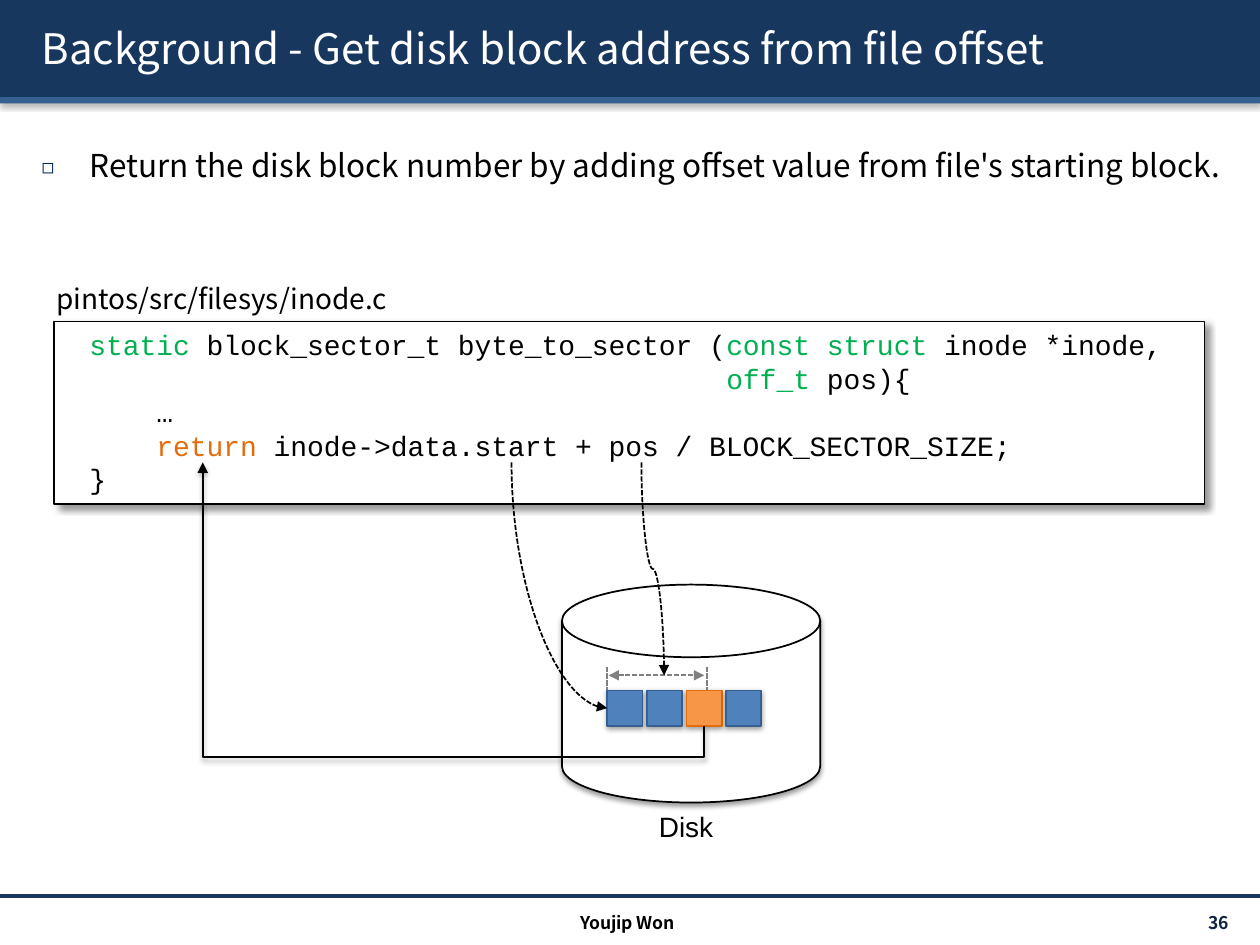
from lxml import etree
from pptx import Presentation, util as u
from pptx.dml.color import RGBColor
from pptx.enum import dml, shapes, text
from pptx.oxml.ns import qn

WIDTH, HEIGHT = 10, 7.5
SANS, MONO, LABEL = "Noto Sans CJK KR", "Courier New", "Arial"
COLORS = {
    "navy": "17375E", "steel": "376092", "white": "FFFFFF", "black": "000000",
    "bullet": "002060", "number": "0F243E", "type": "00B050", "keyword": "E46C0A",
    "block": "4F81BD", "target": "F79646", "gray": "808080",
}

TITLE = "Background - Get disk block address from file offset"
BULLET = "Return the disk block number by adding offset value from file's starting block."
CODE = [
    [("static ", "type"), ("block_sector_t byte_to_sector (", "black"),
     ("const struct ", "type"), ("inode *inode,", "black")],
    [(" " * 38, "black"), ("off_t ", "type"), ("pos){", "black")],
    [("    …", "black")],
    [("    ", "black"), ("return ", "keyword"),
     ("inode->data.start + pos / BLOCK_SECTOR_SIZE;", "black")],
    [("}", "black")],
]
LABELS = [  # text, box, font, alignment
    ("pintos/src/filesys/inode.c", (0.35, 2.18, 6.93, 0.37),
     {"name": SANS, "size": 16}, "LEFT"),
    ("Disk", (5.09, 6.37, 0.71, 0.37), {"name": LABEL, "size": 16}, "CENTER"),
    ("Youjip Won", (3.32, 7.2, 3.32, 0.24),
     {"name": SANS, "size": 10, "bold": True}, "CENTER"),
    ("36", (8.71, 7.2, 1.14, 0.24),
     {"name": SANS, "size": 10, "bold": True, "color": "number"}, "RIGHT"),
]
BLOCKS = [("block", "steel"), ("block", "steel"), ("target", "keyword"), ("block", "steel")]
BLOCK_LEFT, BLOCK_TOP, BLOCK_SIZE, BLOCK_STEP = 4.82, 5.48, 0.28, 0.314
SOFT = {"opacity": 38, "blur": 3.1, "distance": 1.6, "angle": 90}
CODE_SHADOW = {"opacity": 40, "blur": 4, "distance": 3, "angle": 45}
TEXT_SHADOW = {"opacity": 100, "blur": 0, "distance": 2, "angle": 45}


def rgb(name):
    return RGBColor.from_string(COLORS[name])


def inches(values):
    return [u.Inches(value) for value in values]


def shadow_list(opacity, blur, distance, angle):
    effects = etree.Element(qn("a:effectLst"))
    outer = etree.SubElement(effects, qn("a:outerShdw"), blurRad=str(u.Pt(blur)),
                             dist=str(u.Pt(distance)), dir=str(angle * 60000),
                             algn="t", rotWithShape="0")
    color = etree.SubElement(outer, qn("a:srgbClr"), val=COLORS["black"])
    etree.SubElement(color, qn("a:alpha"), val=str(opacity * 1000))
    return effects


def set_font(font, name, size, color="black", bold=False):
    values = {"name": name, "size": u.Pt(size), "bold": bold}
    for key, value in values.items():
        setattr(font, key, value)
    font.color.rgb = rgb(color)


def set_frame(frame, anchor="TOP", wrap=True):
    values = {"word_wrap": wrap, "auto_size": text.MSO_AUTO_SIZE.NONE,
              "vertical_anchor": getattr(text.MSO_ANCHOR, anchor)}
    for key, value in values.items():
        setattr(frame, key, value)


def place(shape, box):
    for key, value in zip(("left", "top", "width", "height"), inches(box)):
        setattr(shape, key, value)


def add_box(slide, box, fill, line=None, weight=1, shadow=SOFT, kind="RECTANGLE"):
    shape = slide.shapes.add_shape(getattr(shapes.MSO_SHAPE, kind), *inches(box))
    shape.shadow.inherit = False
    shape.fill.solid()
    shape.fill.fore_color.rgb = rgb(fill)
    if line:
        shape.line.color.rgb = rgb(line)
        shape.line.width = u.Pt(weight)
    else:
        shape.line.fill.background()
    properties = shape._element.spPr
    properties.replace(properties.find(qn("a:effectLst")), shadow_list(**shadow))
    return shape


def add_line(slide, start, end, color="black", weight=1, dashed=False, arrows=(),
             kind="STRAIGHT", shadow=None):
    line = slide.shapes.add_connector(getattr(shapes.MSO_CONNECTOR, kind),
                                      *inches(start + end))
    line.line.color.rgb = rgb(color)
    line.line.width = u.Pt(weight)
    if dashed:
        line.line.dash_style = dml.MSO_LINE.SQUARE_DOT
    for side in arrows:
        etree.SubElement(line.line._get_or_add_ln(), qn(f"a:{side}End"), type="triangle")
    line._element.spPr.append(
        shadow_list(**shadow) if shadow else etree.Element(qn("a:effectLst")))
    return line


def add_turned_line(slide, start, end, preset, bend=None, **style):
    """Connector that leaves its start vertically: a frame turned a quarter and flipped."""
    line = add_line(slide, start, end, **style)
    run, rise = abs(end[0] - start[0]), abs(end[1] - start[1])
    middle = [(a + b) / 2 for a, b in zip(start, end)]
    place(line, (middle[0] - rise / 2, middle[1] - run / 2, rise, run))
    properties = line._element.spPr
    frame = properties.find(qn("a:xfrm"))
    frame.attrib.pop("flipV", None)
    frame.set("flipH", "1")
    frame.set("rot", str((270 if end[1] > start[1] else 90) * 60000))
    geometry = properties.find(qn("a:prstGeom"))
    geometry.set("prst", preset)
    if bend is not None:
        etree.SubElement(geometry.get_or_add_avLst(), qn("a:gd"), name="adj1",
                         fmla=f"val {round(bend * 100000)}")


def add_header(slide):
    add_box(slide, (0, 0, WIDTH, 0.77), "navy")
    add_box(slide, (0, 0.77, WIDTH, 0.05), "steel")
    add_line(slide, (0, 7.11), (WIDTH, 7.11), "navy", 2)
    title, body = slide.placeholders
    for holder, box, words, size, color, anchor in (
            (title, (0.23, 0.06, 9.61, 0.64), TITLE, 24, "white", "MIDDLE"),
            (body, (0.23, 0.96, 9.61, 6.02), BULLET, 18, "black", "TOP")):
        place(holder, box)
        set_frame(holder.text_frame, anchor)
        para = holder.text_frame.paragraphs[0]
        para.alignment = text.PP_ALIGN.LEFT
        para.space_before = u.Pt(0)
        span = para.add_run()
        span.text = words
        set_font(span.font, SANS, size, color)
        # Placeholders come first in the tree; lift them above the bands.
        slide.shapes._spTree.append(holder._element)
    heading = title.text_frame.paragraphs[0].runs[0]
    heading._r.rPr.find(qn("a:solidFill")).addnext(shadow_list(**TEXT_SHADOW))

    para = body.text_frame.paragraphs[0]
    para.line_spacing = 1.5
    options = para._p.get_or_add_pPr()
    options.set("marL", str(u.Inches(0.38)))
    options.set("indent", str(-u.Inches(0.38)))
    color = etree.SubElement(options, qn("a:buClr"))
    etree.SubElement(color, qn("a:srgbClr"), val=COLORS["bullet"])
    etree.SubElement(options, qn("a:buSzPct"), val="65000")
    etree.SubElement(options, qn("a:buFont"), typeface=SANS)
    etree.SubElement(options, qn("a:buChar"), char="◻")


def add_label(slide, words, box, font, alignment):
    frame = slide.shapes.add_textbox(*inches(box)).text_frame
    set_frame(frame, "MIDDLE")
    para = frame.paragraphs[0]
    para.alignment = getattr(text.PP_ALIGN, alignment)
    span = para.add_run()
    span.text = words
    set_font(span.font, **font)


def add_code(slide):
    frame = add_box(slide, (0.43, 2.55, 9.13, 1.45), "white", "black", 0.75,
                    CODE_SHADOW).text_frame
    set_frame(frame)
    frame.margin_left = u.Inches(0.28)
    for index, pieces in enumerate(CODE):
        para = frame.add_paragraph() if index else frame.paragraphs[0]
        para.alignment = text.PP_ALIGN.LEFT
        for words, color in pieces:
            span = para.add_run()
            span.text = words
            set_font(span.font, MONO, 16, color)


def add_disk(slide):
    add_box(slide, (4.46, 4.64, 2.05, 1.73), "white", "black",
            kind="FLOWCHART_MAGNETIC_DISK")
    for index, (fill, line) in enumerate(BLOCKS):
        left = BLOCK_LEFT + index * BLOCK_STEP
        add_box(slide, (left, BLOCK_TOP, BLOCK_SIZE, BLOCK_SIZE), fill, line)
    dashed = {"dashed": True, "arrows": ["tail"], "kind": "CURVE"}
    add_turned_line(slide, (4.06, 3.67), (BLOCK_LEFT, 5.62), "curvedConnector2", **dashed)
    for x in (BLOCK_LEFT, 5.61):
        add_line(slide, (x, 5.29), (x, BLOCK_TOP), "gray", dashed=True)
    add_line(slide, (4.83, 5.36), (5.59, 5.36), "gray", dashed=True, arrows=["head", "tail"])
    add_turned_line(slide, (5.09, 3.67), (5.27, 5.36), "curvedConnector3", 0.5, **dashed)
    add_turned_line(slide, (5.59, 5.76), (1.61, 3.67), "bentConnector3", -0.12,
                    arrows=["tail"], kind="ELBOW", shadow=SOFT)


def main():
    deck = Presentation()
    deck.slide_width, deck.slide_height = inches((WIDTH, HEIGHT))
    slide = deck.slides.add_slide(deck.slide_layouts[1])
    add_header(slide)
    add_code(slide)
    add_disk(slide)
    for label in LABELS:
        add_label(slide, *label)
    deck.save("out.pptx")


if __name__ == "__main__":
    main()
